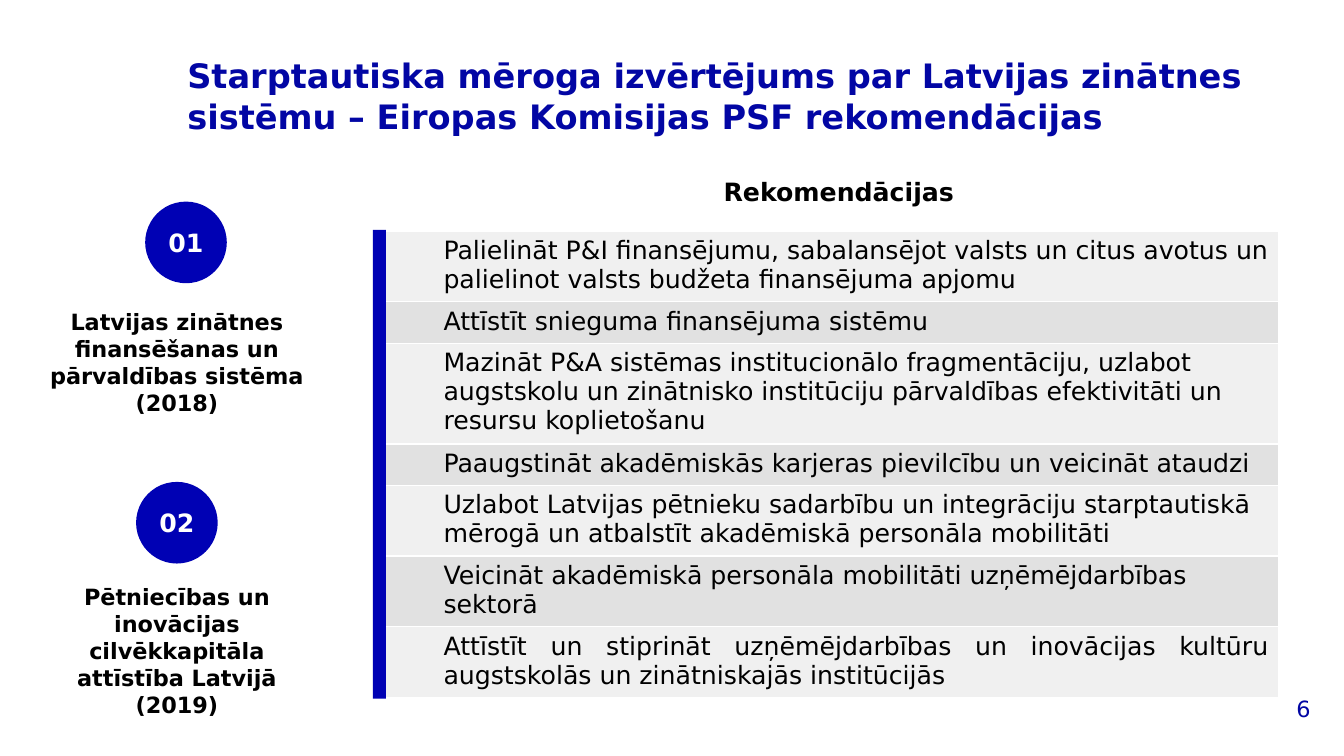
from lxml import etree
from pptx import Presentation
from pptx.dml.color import RGBColor
from pptx.enum.shapes import MSO_SHAPE
from pptx.enum.text import MSO_ANCHOR, PP_ALIGN
from pptx.oxml.ns import qn
from pptx.util import Pt

LEFT, CENTER, RIGHT = PP_ALIGN.LEFT, PP_ALIGN.CENTER, PP_ALIGN.RIGHT
JUSTIFY = PP_ALIGN.JUSTIFY
TOP, MIDDLE = MSO_ANCHOR.TOP, MSO_ANCHOR.MIDDLE
OVAL, RECTANGLE = MSO_SHAPE.OVAL, MSO_SHAPE.RECTANGLE

FONT = "DejaVu Sans"
NAVY, BLUE, BLACK, WHITE = "0206A4", "0001B4", "000000", "FFFFFF"
ROW_FILLS = ("F0F0F0", "E1E1E1")

TITLE = ("Starptautiska mēroga izvērtējums par Latvijas zinātnes sistēmu – "
         "Eiropas Komisijas PSF rekomendācijas")

# Number, report, year, badge left and top, label top and height
REPORTS = [
    ("01", "Latvijas zinātnes finansēšanas un pārvaldības sistēma", "(2018)",
     (103.7, 144), (216.7, 85)),
    ("02", "Pētniecības un inovācijas cilvēkkapitāla attīstība Latvijā", "(2019)",
     (97.2, 344.2), (413.3, 104.4)),
]

# Recommendation, number of lines, alignment
RECOMMENDATIONS = [
    ("Palielināt P&I finansējumu, sabalansējot valsts un citus avotus un "
     "palielinot valsts budžeta finansējuma apjomu", 2, LEFT),
    ("Attīstīt snieguma finansējuma sistēmu", 1, LEFT),
    ("Mazināt P&A sistēmas institucionālo fragmentāciju, uzlabot augstskolu un "
     "zinātnisko institūciju pārvaldības efektivitāti un resursu koplietošanu", 3, LEFT),
    ("Paaugstināt akadēmiskās karjeras pievilcību un veicināt ataudzi", 1, LEFT),
    ("Uzlabot Latvijas pētnieku sadarbību un integrāciju starptautiskā mērogā "
     "un atbalstīt akadēmiskā personāla mobilitāti", 2, LEFT),
    ("Veicināt akadēmiskā personāla mobilitāti uzņēmējdarbības sektorā", 2, LEFT),
    ("Attīstīt un stiprināt uzņēmējdarbības un inovācijas kultūru augstskolās "
     "un zinātniskajās institūcijās", 2, JUSTIFY),
]


def color(value):
    return RGBColor.from_string(value)


def write(frame, lines, size, ink, bold=False, align=LEFT):
    """Fill a text frame with one paragraph per line."""
    for i, line in enumerate(lines):
        paragraph = frame.paragraphs[0] if i == 0 else frame.add_paragraph()
        paragraph.alignment = align
        run = paragraph.add_run()
        run.text = line
        for name, value in {"name": FONT, "size": Pt(size), "bold": bold}.items():
            setattr(run.font, name, value)
        run.font.color.rgb = color(ink)


def add_text(slide, box, lines, size, ink, bold=False, align=LEFT,
             anchor=TOP, wrap=True):
    frame = slide.shapes.add_textbox(*map(Pt, box)).text_frame
    frame.word_wrap = wrap
    frame.vertical_anchor = anchor
    write(frame, lines, size, ink, bold, align)


def add_block(slide, kind, box):
    block = slide.shapes.add_shape(kind, *map(Pt, box))
    block.shadow.inherit = False
    block.fill.solid()
    block.fill.fore_color.rgb = color(BLUE)
    block.line.fill.background()
    return block


def add_report(slide, number, report, year, badge_at, label_box):
    # Numbered badge
    frame = add_block(slide, OVAL, (*badge_at, 58.3, 58.3)).text_frame
    insets = ("margin_left", "margin_right", "margin_top", "margin_bottom")
    for name, value in {**dict.fromkeys(insets, 0), "word_wrap": False,
                        "vertical_anchor": MIDDLE}.items():
        setattr(frame, name, value)
    write(frame, [number], 18, WHITE, True, CENTER)
    # Report name and year
    top, height = label_box
    add_text(slide, (25.9, top, 200.9, height), [report, year], 16, BLACK, True, CENTER)


def add_borders(cell):
    properties = cell._tc.get_or_add_tcPr()
    for side in ("lnL", "lnR", "lnT", "lnB"):
        line = etree.SubElement(properties, qn(f"a:{side}"), w=str(Pt(1)))
        fill = etree.SubElement(line, qn("a:solidFill"))
        etree.SubElement(fill, qn("a:srgbClr"), val=WHITE)


def add_recommendations(slide, left, top, width):
    # Heading
    add_text(slide, (left + 236.2, top - 42.5, 182.2, 28.8), ["Rekomendācijas"],
             18, BLACK, True, wrap=False)
    # Table, with row heights that follow the number of lines
    heights = [8.4 + 21.1 * lines for _, lines, _ in RECOMMENDATIONS]
    table = slide.shapes.add_table(len(heights), 1, Pt(left), Pt(top), Pt(width),
                                   Pt(sum(heights))).table
    table.first_row = table.horz_banding = False
    for i, (advice, _, align) in enumerate(RECOMMENDATIONS):
        table.rows[i].height = Pt(heights[i])
        cell = table.cell(i, 0)
        add_borders(cell)
        cell.fill.solid()
        cell.fill.fore_color.rgb = color(ROW_FILLS[i % 2])
        paragraph = cell.text_frame.paragraphs[0]
        paragraph.level = 1
        indents = paragraph._p.get_or_add_pPr()
        indents.set("marL", str(Pt(36)))
        indents.set("indent", "0")
        write(cell.text_frame, [advice], 18, BLACK, align=align)
    # Accent bar
    add_block(slide, RECTANGLE, (left - 7.2, top - 0.8, 9.3, sum(heights) + 1.7))


def main():
    deck = Presentation()
    deck.slide_width, deck.slide_height = Pt(960), Pt(540)
    slide = deck.slides.add_slide(deck.slide_layouts[6])
    # Title and page number
    add_text(slide, (126.7, 36, 778.3, 65.5), [TITLE], 24, NAVY, True)
    add_text(slide, (727.2, 491.8, 216, 28.8), ["6"], 16, NAVY,
             align=RIGHT, anchor=MIDDLE)
    # Reports on the left, recommendations on the right
    for report in REPORTS:
        add_report(slide, *report)
    add_recommendations(slide, 273.6, 165, 640)
    deck.save("out.pptx")


if __name__ == "__main__":
    main()
